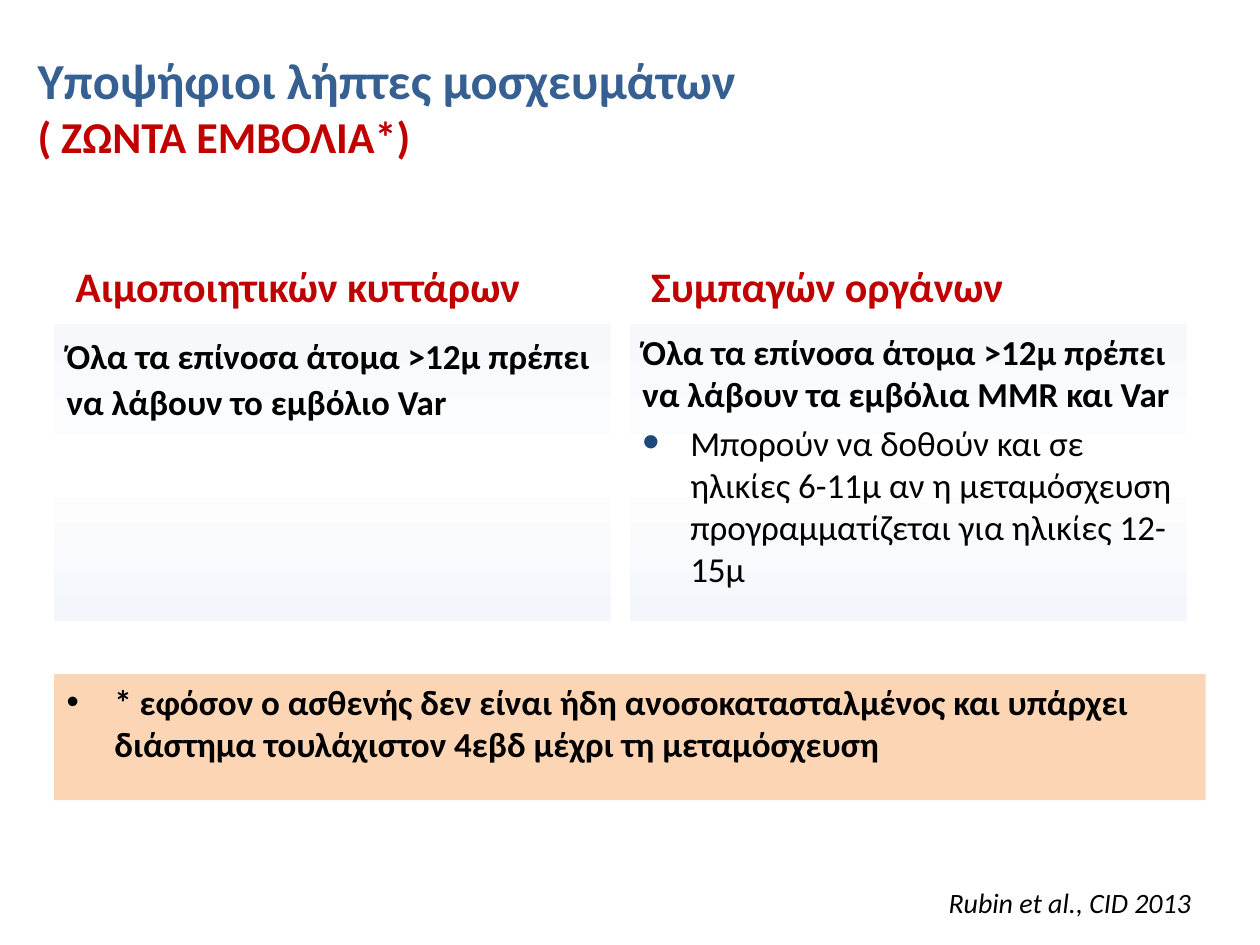
from lxml import etree
from pptx import Presentation
from pptx.dml.color import RGBColor
from pptx.enum.shapes import MSO_SHAPE as Shape
from pptx.enum.text import MSO_ANCHOR as Anchor, PP_ALIGN as Align
from pptx.oxml import parse_xml
from pptx.oxml.ns import nsdecls, qn
from pptx.util import Inches, Pt

BLUE = RGBColor(0x37, 0x60, 0x92)
RED = RGBColor(0xC0, 0x00, 0x00)
BLACK = RGBColor(0x00, 0x00, 0x00)
PEACH = RGBColor(0xFC, 0xD5, 0xB5)
NAVY = RGBColor(0x1F, 0x49, 0x7D)
PANEL_STOPS = (
    (0, RGBColor(0xF6, 0xF8, 0xFC)),
    (50, RGBColor(0xFF, 0xFF, 0xFF)),
    (100, RGBColor(0xF3, 0xF6, 0xFB)),
)
BODY = {"size": Pt(20), "bold": True}


def write(para, text, **formats):
    """Add a Calibri run with the given font formats."""
    color = formats.pop("color", BLACK)
    span = para.add_run()
    span.text = text
    for name, value in {"name": "Calibri", **formats}.items():
        setattr(span.font, name, value)
    span.font.color.rgb = color


def add_bullet(para, color=None, percent=100):
    """Give the paragraph a hanging round bullet."""
    props = para._p.get_or_add_pPr()
    indent = Inches(0.38)
    props.set("marL", str(indent))
    props.set("indent", str(-indent))
    if color is not None:
        tint = etree.SubElement(props, qn("a:buClr"))
        etree.SubElement(tint, qn("a:srgbClr")).set("val", str(color))
    etree.SubElement(props, qn("a:buSzPct")).set("val", str(percent * 1000))
    etree.SubElement(props, qn("a:buFont")).set("typeface", "Arial")
    etree.SubElement(props, qn("a:buChar")).set("char", "•")


def add_text(page, bounds, wrap=True):
    """Add an empty text box and return its frame."""
    frame = page.shapes.add_textbox(*map(Inches, bounds)).text_frame
    frame.word_wrap = wrap
    return frame


def add_block(page, bounds):
    """Add a plain rectangle for top-left text."""
    box = page.shapes.add_shape(Shape.RECTANGLE, *map(Inches, bounds))
    box.shadow.inherit = False
    box.line.fill.background()
    box.text_frame.word_wrap = True
    box.text_frame.vertical_anchor = Anchor.TOP
    box.text_frame.paragraphs[0].alignment = Align.LEFT
    return box


def fill_panel(box):
    """Fill the box with the vertical three-stop gradient."""
    stops = "".join(
        f'<a:gs pos="{place * 1000}"><a:srgbClr val="{color}"/></a:gs>'
        for place, color in PANEL_STOPS
    )
    gradient = parse_xml(
        f'<a:gradFill {nsdecls("a")} rotWithShape="1"><a:gsLst>{stops}</a:gsLst>'
        '<a:lin ang="5400000" scaled="0"/></a:gradFill>'
    )
    box._element.spPr.find(qn("a:prstGeom")).addnext(gradient)


def add_title(page, bounds):
    """Place the two-line title."""
    frame = add_text(page, bounds)
    frame.margin_top = Inches(0.02)
    write(frame.paragraphs[0], "Υποψήφιοι λήπτες μοσχευμάτων", size=Pt(28.8), bold=True, color=BLUE)
    write(frame.add_paragraph(), "( ΖΩΝΤΑ ΕΜΒΟΛΙΑ*)", size=Pt(25.2), bold=True, color=RED)


def add_column(page, left, heading, lead, detail=None, spacing=None):
    """Place a heading above a gradient panel of advice."""
    frame = add_text(page, (left + 0.07, 2.02, 4.42, 0.7))
    write(frame.paragraphs[0], heading, size=Pt(24), bold=True, color=RED)
    box = add_block(page, (left, 2.57, 4.42, 2.36))
    fill_panel(box)
    para = box.text_frame.paragraphs[0]
    para.line_spacing = spacing
    write(para, lead, **BODY)
    if detail:
        para = box.text_frame.add_paragraph()
        para.alignment = Align.LEFT
        para.space_before = Pt(4)
        add_bullet(para, NAVY, 140)
        write(para, detail, size=Pt(20), bold=False)


def add_note(page, bounds):
    """Place the footnote band."""
    box = add_block(page, bounds)
    box.fill.solid()
    box.fill.fore_color.rgb = PEACH
    para = box.text_frame.paragraphs[0]
    add_bullet(para)
    write(para, "* εφόσον ο ασθενής δεν είναι ήδη ανοσοκατασταλμένος και υπάρχει "
                "διάστημα τουλάχιστον 4εβδ μέχρι τη μεταμόσχευση", **BODY)


def add_citation(page, bounds):
    """Place the literature reference."""
    frame = add_text(page, bounds, wrap=False)
    write(frame.paragraphs[0], "Rubin et al., CID 2013", size=Pt(16), italic=True)


def main():
    """Build and save the deck."""
    deck = Presentation()
    deck.slide_width, deck.slide_height = Inches(10), Inches(7.5)
    page = deck.slides.add_slide(deck.slide_layouts[6])
    add_title(page, (0.2, 0.37, 9, 1.25))
    add_column(page, 0.43, "Αιμοποιητικών κυττάρων",
               "Όλα τα επίνοσα άτομα >12μ πρέπει να λάβουν το εμβόλιο Var", spacing=1.1)
    add_column(page, 5, "Συμπαγών οργάνων",
               "Όλα τα επίνοσα άτομα >12μ πρέπει να λάβουν τα εμβόλια MMR και Var",
               "Μπορούν να δοθούν και σε ηλικίες 6-11μ αν η μεταμόσχευση "
               "προγραμματίζεται για ηλικίες 12-15μ")
    add_note(page, (0.43, 5.35, 9.14, 1))
    add_citation(page, (7.43, 6.98, 2.14, 0.37))
    deck.save("out.pptx")


if __name__ == "__main__":
    main()
